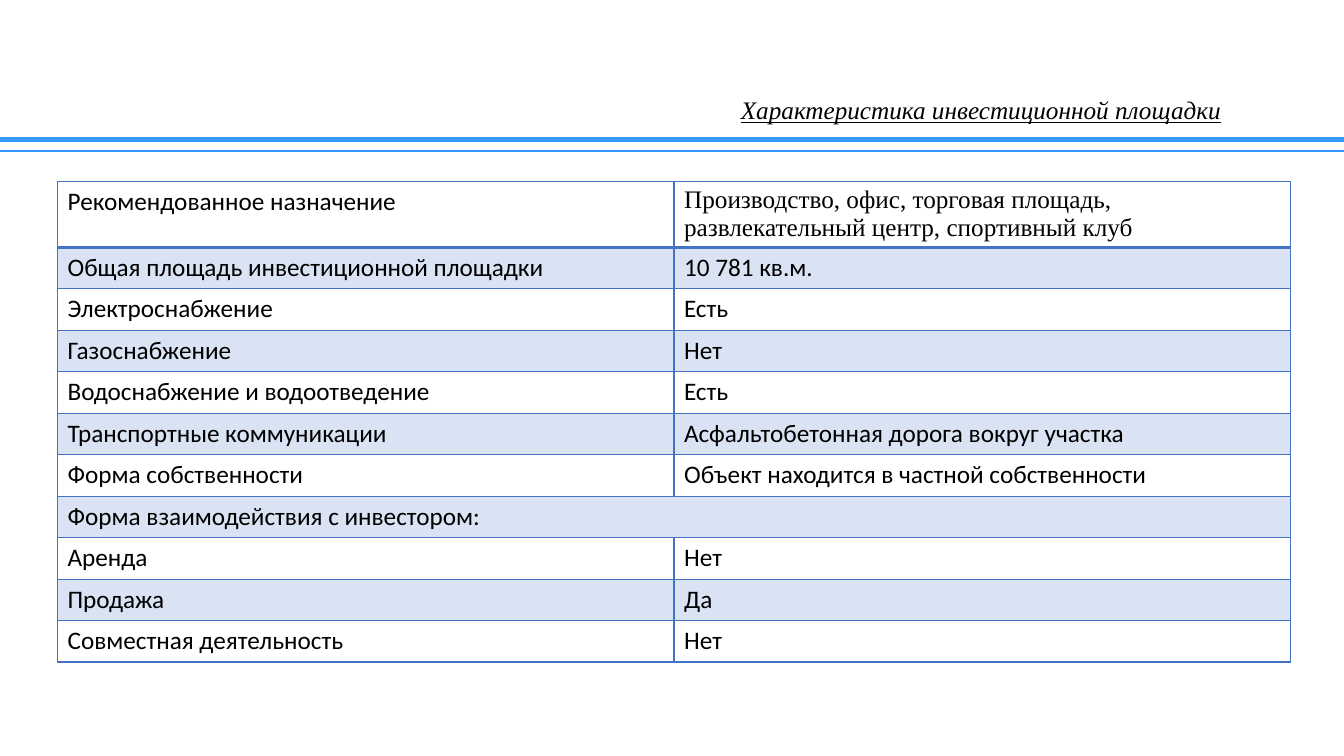
import pptx
import pptx.dml.color
import pptx.enum.shapes
import pptx.enum.text
import pptx.oxml
import pptx.oxml.ns
import pptx.util

ROWS = [
    ("Рекомендованное назначение",
     "Производство, офис, торговая площадь, развлекательный центр, спортивный клуб"),
    ("Общая площадь инвестиционной площадки", "10 781 кв.м."),
    ("Электроснабжение", "Есть"),
    ("Газоснабжение", "Нет"),
    ("Водоснабжение и водоотведение", "Есть"),
    ("Транспортные коммуникации", "Асфальтобетонная дорога вокруг участка"),
    ("Форма собственности", "Объект находится в частной собственности"),
    ("Форма взаимодействия с инвестором:",),
    ("Аренда", "Нет"),
    ("Продажа", "Да"),
    ("Совместная деятельность", "Нет"),
]


def rgb(value):
    return pptx.dml.color.RGBColor.from_string(value)


class SlideBuilder:
    RULE, BORDER, BAND, INK = "3399FF", "4472C4", "DAE3F3", "000000"
    SERIF, SANS = "Times New Roman", "Calibri"

    def __init__(self, prs):
        self.width, self.height = prs.slide_width, prs.slide_height
        self.slide = prs.slides.add_slide(prs.slide_layouts[5])

    def x(self, percent):
        return round(self.width * percent / 100)

    def y(self, percent):
        return round(self.height * percent / 100)

    def style(self, font, **values):
        for name, value in {"size": pptx.util.Pt(18), **values}.items():
            setattr(font, name, value)
        font.color.rgb = rgb(self.INK)

    def title(self, text, left, top, width, height):
        sp = self.slide.shapes.title
        sp.left, sp.top = self.x(left), self.y(top)
        sp.width, sp.height = self.x(width), self.y(height)
        tf = sp.text_frame
        tf.auto_size = pptx.enum.text.MSO_AUTO_SIZE.NONE
        tf.vertical_anchor = pptx.enum.text.MSO_ANCHOR.MIDDLE
        p = tf.paragraphs[0]
        p.alignment, p.line_spacing = pptx.enum.text.PP_ALIGN.CENTER, 0.9
        r = p.add_run()
        r.text = text
        self.style(r.font, name=self.SERIF, italic=True, underline=True)

    def rule(self, top, weight):
        line = self.slide.shapes.add_connector(
            pptx.enum.shapes.MSO_CONNECTOR.STRAIGHT, 0, self.y(top), self.width, self.y(top))
        line.line.color.rgb = rgb(self.RULE)
        line.line.width = pptx.util.Pt(weight)
        line._element.spPr.append(pptx.oxml.parse_xml(
            f"<a:effectLst {pptx.oxml.ns.nsdecls('a')}/>"))

    def borders(self, cell, **weights):
        tcPr = cell._tc.get_or_add_tcPr()
        for side in "LRTB":
            width = pptx.util.Pt(weights.get(side, 1))
            tcPr.append(pptx.oxml.parse_xml(
                f'<a:ln{side} {pptx.oxml.ns.nsdecls("a")} w="{width}"><a:solidFill>'
                f'<a:srgbClr val="{self.BORDER}"/></a:solidFill></a:ln{side}>'))

    def table(self, rows, left, top, width, row_height, head_height):
        height = head_height + row_height * (len(rows) - 1)
        table = self.slide.shapes.add_table(
            len(rows), 2, self.x(left), self.y(top), self.x(width), self.y(height)).table
        table.first_row = table.horz_banding = False
        for i, texts in enumerate(rows):
            table.rows[i].height = self.y(row_height if i else head_height)
            # The thick line under the first row belongs to both rows it parts
            thick = {0: {"B": 2}, 1: {"T": 2}}.get(i, {})
            for j in range(2):
                cell = table.cell(i, j)
                self.borders(cell, **thick)
                if i % 2:
                    cell.fill.solid()
                    cell.fill.fore_color.rgb = rgb(self.BAND)
                else:
                    cell.fill.background()
            if len(texts) == 1:
                table.cell(i, 0).merge(table.cell(i, 1))
            for j, text in enumerate(texts):
                r = table.cell(i, j).text_frame.paragraphs[0].add_run()
                r.text = text
                self.style(r.font, name=self.SERIF if (i, j) == (0, 1) else self.SANS)


def main():
    prs = pptx.Presentation()
    prs.slide_width, prs.slide_height = pptx.util.Inches(13.33), pptx.util.Inches(7.5)
    s = SlideBuilder(prs)
    # Heading above a double rule
    s.rule(18.4, 3.5)
    s.rule(20, 1.5)
    s.title("Характеристика инвестиционной площадки", 50, 12.93, 46, 3.6)
    # Site characteristics
    s.table(ROWS, left=4.28, top=24, width=91.75, row_height=5.49, head_height=8.7)
    prs.save("out.pptx")


if __name__ == "__main__":
    main()
